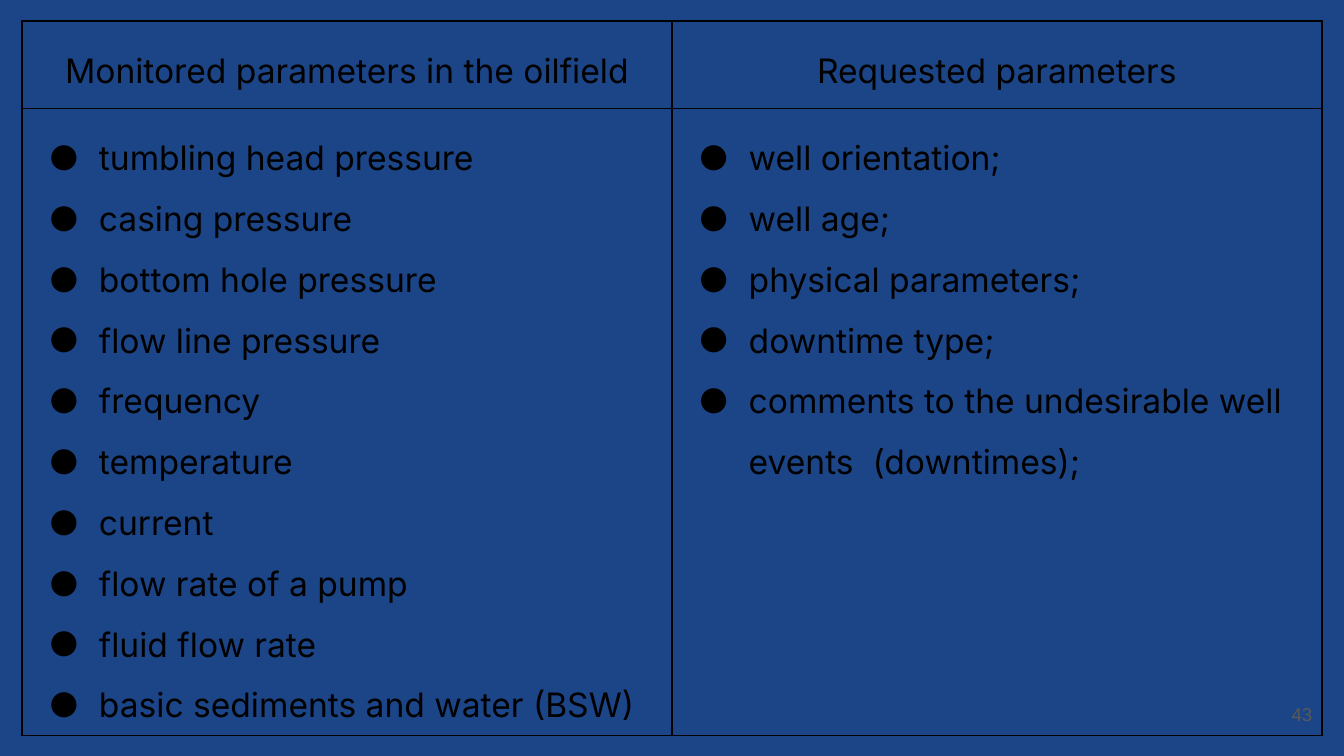
from dataclasses import dataclass

from lxml.etree import SubElement
from pptx import Presentation
from pptx.dml.color import RGBColor
from pptx.enum.text import MSO_ANCHOR, PP_ALIGN
from pptx.oxml.ns import qn
from pptx.util import Cm, Pt


@dataclass(frozen=True)
class Theme:
    background: str = "1C4587"
    ink: str = "000000"
    muted: str = "595959"
    body_font: str = "Inter"
    number_font: str = "Arial"
    body_size: int = 18
    number_size: int = 10
    border: int = 1


class SlideBuilder:
    """Draws styled elements on the current slide."""

    def __init__(self, slide, theme):
        self.slide, self.theme = slide, theme

    def background(self):
        fill = self.slide.background.fill
        fill.solid()
        fill.fore_color.rgb = RGBColor.from_string(self.theme.background)

    def apply(self, target, values):
        for name, value in values.items():
            setattr(target, name, value)

    def add_text(self, paragraph, text, font, size, color):
        run = paragraph.add_run()
        run.text = text
        self.apply(run.font, {"name": font, "size": Pt(size), "bold": False})
        run.font.color.rgb = RGBColor.from_string(color)

    def bullet(self, paragraph):
        properties = paragraph._p.get_or_add_pPr()
        properties.set("marL", str(Cm(1.27)))
        properties.set("indent", str(-Cm(0.95)))
        color = SubElement(properties, qn("a:buClr"))
        SubElement(color, qn("a:srgbClr"), val=self.theme.ink)
        SubElement(properties, qn("a:buFont"), typeface=self.theme.body_font)
        SubElement(properties, qn("a:buChar"), char="●")

    def borders(self, cell):
        properties = cell._tc.get_or_add_tcPr()
        for side in ("lnL", "lnR", "lnT", "lnB"):
            line = SubElement(properties, qn(f"a:{side}"), w=str(Pt(self.theme.border)))
            fill = SubElement(line, qn("a:solidFill"))
            SubElement(fill, qn("a:srgbClr"), val=self.theme.ink)

    def fill_cell(self, cell, lines, alignments, bulleted):
        self.borders(cell)
        cell.fill.background()
        sides = ("left", "right", "top", "bottom")
        self.apply(cell, {f"margin_{side}": Cm(0.18) for side in sides})
        frame = cell.text_frame
        for index, (text, alignment) in enumerate(zip(lines, alignments)):
            paragraph = frame.add_paragraph() if index else frame.paragraphs[0]
            self.apply(paragraph, {"alignment": alignment, "line_spacing": 1.5})
            if bulleted:
                self.bullet(paragraph)
            self.add_text(paragraph, text, self.theme.body_font,
                          self.theme.body_size, self.theme.ink)

    def table(self, columns, left, top, column_width, row_heights):
        table = self.slide.shapes.add_table(
            len(row_heights), len(columns), left, top,
            column_width * len(columns), sum(row_heights)).table
        self.apply(table, {"first_row": False, "horz_banding": False})
        for row, height in zip(table.rows, row_heights):
            row.height = height
        for index, (heading, items, alignments) in enumerate(columns):
            table.columns[index].width = column_width
            self.fill_cell(table.cell(0, index), [heading], [PP_ALIGN.CENTER], False)
            self.fill_cell(table.cell(1, index), items, alignments, True)

    def page_number(self, number, left, top, width, height):
        frame = self.slide.shapes.add_textbox(left, top, width, height).text_frame
        self.apply(frame, {"word_wrap": True, "vertical_anchor": MSO_ANCHOR.MIDDLE})
        paragraph = frame.paragraphs[0]
        paragraph.alignment = PP_ALIGN.RIGHT
        self.add_text(paragraph, number, self.theme.number_font,
                      self.theme.number_size, self.theme.muted)


def main():
    monitored = [
        "tumbling head pressure", "casing pressure", "bottom hole pressure",
        "flow line pressure", "frequency", "temperature", "current",
        "flow rate of a pump", "fluid flow rate", "basic sediments and water (BSW)",
    ]
    requested = [
        "well orientation;", "well age;", "physical parameters;", "downtime type;",
        "comments to the undesirable well events  (downtimes);",
    ]
    columns = [
        ("Monitored parameters in the oilfield", monitored,
         [PP_ALIGN.JUSTIFY] * len(monitored)),
        ("Requested parameters", requested,
         [PP_ALIGN.LEFT] * 3 + [PP_ALIGN.JUSTIFY, PP_ALIGN.LEFT]),
    ]
    deck = Presentation()
    deck.slide_width, deck.slide_height = Cm(25.4), Cm(14.29)
    builder = SlideBuilder(deck.slides.add_slide(deck.slide_layouts[6]), Theme())
    builder.background()
    builder.table(columns, Cm(0.42), Cm(0.4), Cm(12.28), [Cm(1.65), Cm(11.79)])
    builder.page_number("43", Cm(23.53), Cm(12.96), Cm(1.52), Cm(1.09))
    deck.save("out.pptx")


if __name__ == "__main__":
    main()
